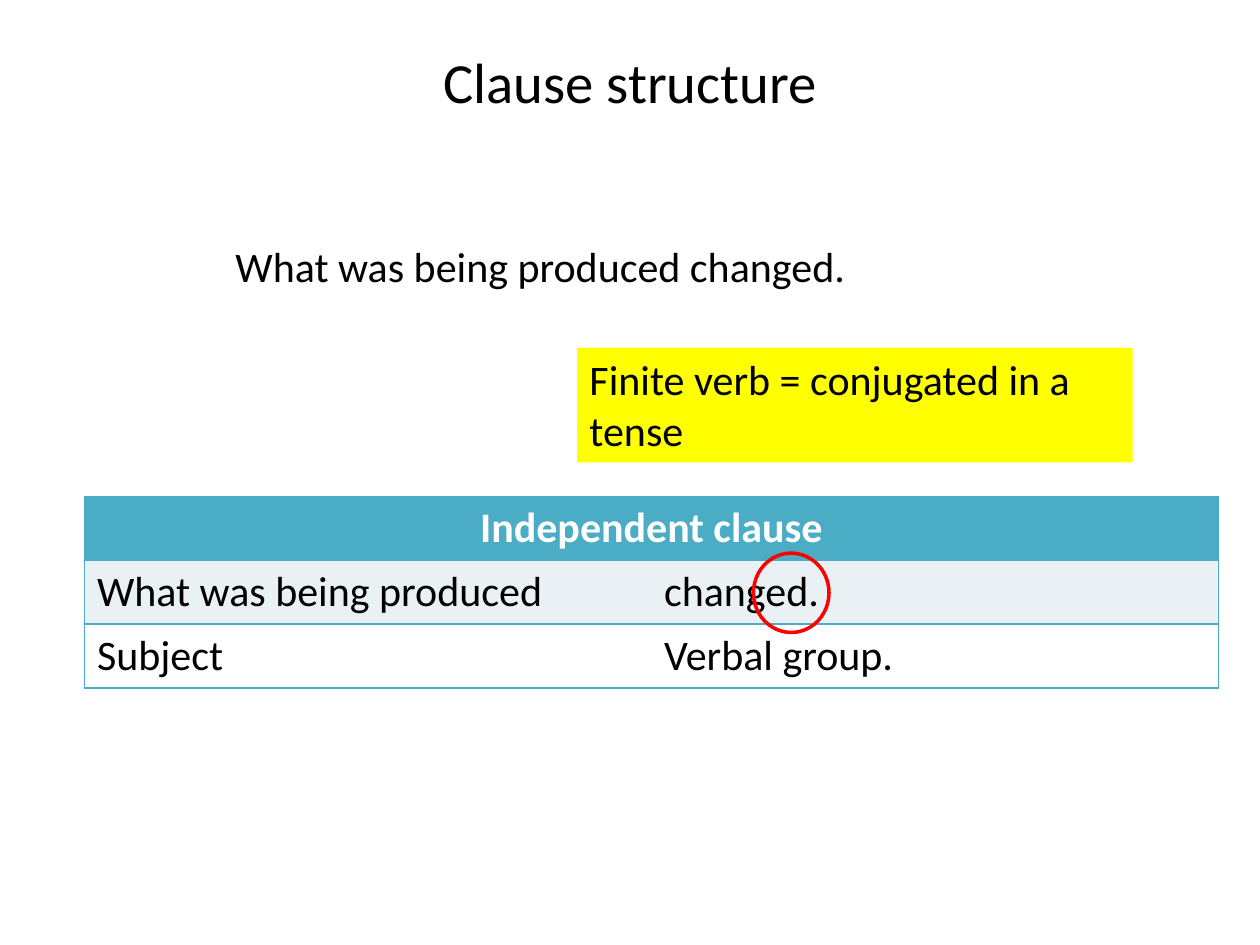
from dataclasses import dataclass

from lxml import etree
from pptx import Presentation
from pptx.dml.color import RGBColor
from pptx.enum.shapes import MSO_SHAPE
from pptx.enum.text import MSO_ANCHOR, PP_ALIGN
from pptx.oxml.ns import qn
from pptx.util import Inches, Pt

BLACK = RGBColor(0x00, 0x00, 0x00)
WHITE = RGBColor(0xFF, 0xFF, 0xFF)
TEAL = RGBColor(0x4B, 0xAC, 0xC6)
PALE = RGBColor(0xE9, 0xF1, 0xF5)
YELLOW = RGBColor(0xFF, 0xFF, 0x00)
RED = RGBColor(0xFF, 0x00, 0x00)
LEFT, CENTER = PP_ALIGN.LEFT, PP_ALIGN.CENTER
TOP, MIDDLE = MSO_ANCHOR.TOP, MSO_ANCHOR.MIDDLE
OVAL = MSO_SHAPE.OVAL
FONT = "Calibri"


@dataclass
class Label:
    text: str
    box: tuple[float, float, float, float]
    size: float = 24
    align: PP_ALIGN = LEFT
    anchor: MSO_ANCHOR = TOP
    fill: RGBColor | None = None


@dataclass
class Row:
    texts: tuple[str, ...]
    fill: RGBColor
    color: RGBColor = BLACK
    bold: bool = False
    align: PP_ALIGN = LEFT


TITLE = Label("Clause structure", (0.5, 0.3, 9, 0.69), 32.4, CENTER, MIDDLE)
NOTE = Label("Finite verb = conjugated in a tense", (4.58, 2.76, 4.41, 0.91), fill=YELLOW)
EXAMPLE = Label("What was being produced changed.", (1.77, 1.86, 7.01, 0.5))
ROWS = [
    Row(("Independent clause",), TEAL, WHITE, True, CENTER),
    Row(("What was being produced", "changed."), PALE),
    Row(("Subject", "Verbal group."), WHITE),
]


def format_text(tf, size: float, color: RGBColor, align: PP_ALIGN, bold: bool = False) -> None:
    for p in tf.paragraphs:
        p.alignment = align
        for r in p.runs:
            r.font.name = FONT
            r.font.size = Pt(size)
            r.font.bold = bold
            r.font.color.rgb = color


def add_label(s, label: Label) -> None:
    sp = s.shapes.add_textbox(*map(Inches, label.box))
    if label.fill is not None:
        sp.fill.solid()
        sp.fill.fore_color.rgb = label.fill
    tf = sp.text_frame
    tf.word_wrap = True
    tf.vertical_anchor = label.anchor
    tf.text = label.text
    format_text(tf, label.size, BLACK, label.align)


def set_borders(cell, sides: str) -> None:
    tc_pr = cell._tc.get_or_add_tcPr()
    for side in "LRTB":
        ln = etree.SubElement(tc_pr, qn(f"a:ln{side}"), w=str(Pt(1)))
        if side in sides:
            fill = etree.SubElement(ln, qn("a:solidFill"))
            etree.SubElement(fill, qn("a:srgbClr"), val=str(TEAL))
        else:
            etree.SubElement(ln, qn("a:noFill"))


def add_clause_table(s, rows: list[Row]) -> None:
    frame = s.shapes.add_table(len(rows), 2, *map(Inches, (0.67, 3.94, 9, 1.52)))
    table = frame.table
    table.first_row = table.horz_banding = False
    table.cell(0, 0).merge(table.cell(0, 1))
    for i, row in enumerate(rows):
        for j, sides in enumerate(("LTB", "RTB")):
            cell = table.cell(i, j)
            set_borders(cell, "LRTB" if i == 0 else sides)
            cell.fill.solid()
            cell.fill.fore_color.rgb = row.fill
        for j, text in enumerate(row.texts):
            cell = table.cell(i, j)
            cell.vertical_anchor = MIDDLE if i == 0 else TOP
            cell.text_frame.text = text
            format_text(cell.text_frame, 24, row.color, row.align, row.bold)


def add_ring(s) -> None:
    sp = s.shapes.add_shape(OVAL, *map(Inches, (5.98, 4.39, 0.6, 0.63)))
    sp.shadow.inherit = False
    sp.fill.background()
    sp.line.color.rgb = RED
    sp.line.width = Pt(2)


def main() -> None:
    prs = Presentation()
    prs.slide_width, prs.slide_height = Inches(10), Inches(7.5)
    s = prs.slides.add_slide(prs.slide_layouts[6])
    add_label(s, TITLE)
    add_clause_table(s, ROWS)
    add_ring(s)
    add_label(s, NOTE)
    add_label(s, EXAMPLE)
    prs.save("out.pptx")


if __name__ == "__main__":
    main()
